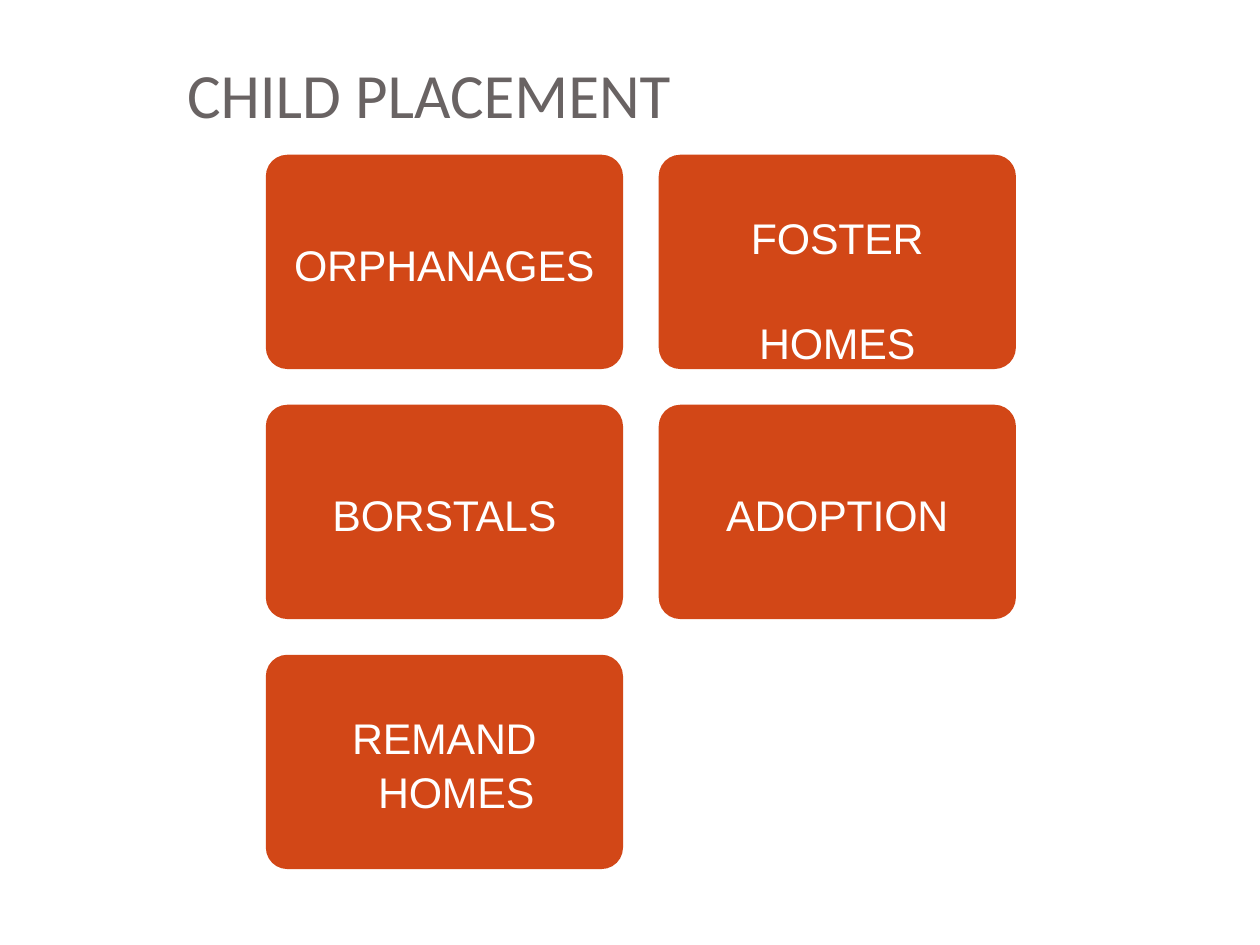
from dataclasses import dataclass

from pptx import Presentation
from pptx.dml.color import RGBColor
from pptx.enum.shapes import MSO_SHAPE
from pptx.enum.text import MSO_ANCHOR, PP_ALIGN
from pptx.util import Cm, Pt


@dataclass(frozen=True)
class Theme:
    heading: RGBColor = RGBColor(0x69, 0x63, 0x63)
    card: RGBColor = RGBColor(0xD2, 0x47, 0x17)
    label: RGBColor = RGBColor(0xFF, 0xFF, 0xFF)
    heading_font: str = "Calibri"
    label_font: str = "Arial"
    heading_size: Pt = Pt(36)
    label_size: Pt = Pt(24.5)


theme = Theme()


def add_run(paragraph, wording, font, size, color):
    run = paragraph.add_run()
    run.text = wording
    run.font.name = font
    run.font.size = size
    run.font.color.rgb = color
    return run


def set_frame(frame, top_inset):
    frame.word_wrap = True
    frame.vertical_anchor = MSO_ANCHOR.MIDDLE
    frame.margin_left = frame.margin_right = frame.margin_bottom = 0
    frame.margin_top = top_inset


presentation = Presentation()
presentation.slide_width = Cm(25.4)
presentation.slide_height = Cm(19.05)
slide = presentation.slides.add_slide(presentation.slide_layouts[5])

heading = slide.shapes.title
heading.left, heading.top = Cm(2.64), Cm(1.07)
heading.width, heading.height = Cm(12.01), Cm(1.6)
set_frame(heading.text_frame, Cm(0.03))
heading_line = heading.text_frame.paragraphs[0]
heading_line.alignment = PP_ALIGN.CENTER
add_run(heading_line, "CHILD PLACEMENT", theme.heading_font,
        theme.heading_size, theme.heading)

grid_left, grid_top = 5.36, 3.12
card_width, card_height, gap = 7.2, 4.32, 0.72
columns = 2

placements = [
    (["ORPHANAGES"], 0.1, 0, 0),
    (["FOSTER", "HOMES"], 1.13, 31, 0),
    (["BORSTALS"], 0.1, 0, 0),
    (["ADOPTION"], 0.1, 0, 0),
    (["REMAND", "HOMES"], 0.1, 1, 0.48),
]

for index, (words, top_inset, line_gap, indent) in enumerate(placements):
    row, column = divmod(index, columns)
    card = slide.shapes.add_shape(
        MSO_SHAPE.ROUNDED_RECTANGLE,
        Cm(grid_left + column * (card_width + gap)),
        Cm(grid_top + row * (card_height + gap)),
        Cm(card_width), Cm(card_height))
    card.adjustments[0] = 0.1
    card.shadow.inherit = False
    card.fill.solid()
    card.fill.fore_color.rgb = theme.card
    card.line.fill.background()

    set_frame(card.text_frame, Cm(top_inset))
    for position, word in enumerate(words):
        if position == 0:
            line = card.text_frame.paragraphs[0]
        else:
            line = card.text_frame.add_paragraph()
            line.space_before = Pt(line_gap)
            line._p.get_or_add_pPr().set("marL", str(Cm(indent)))
        line.alignment = PP_ALIGN.CENTER
        label = add_run(line, word, theme.label_font, theme.label_size, theme.label)
        label.font._element.set("spc", "-10")

presentation.save("out.pptx")
